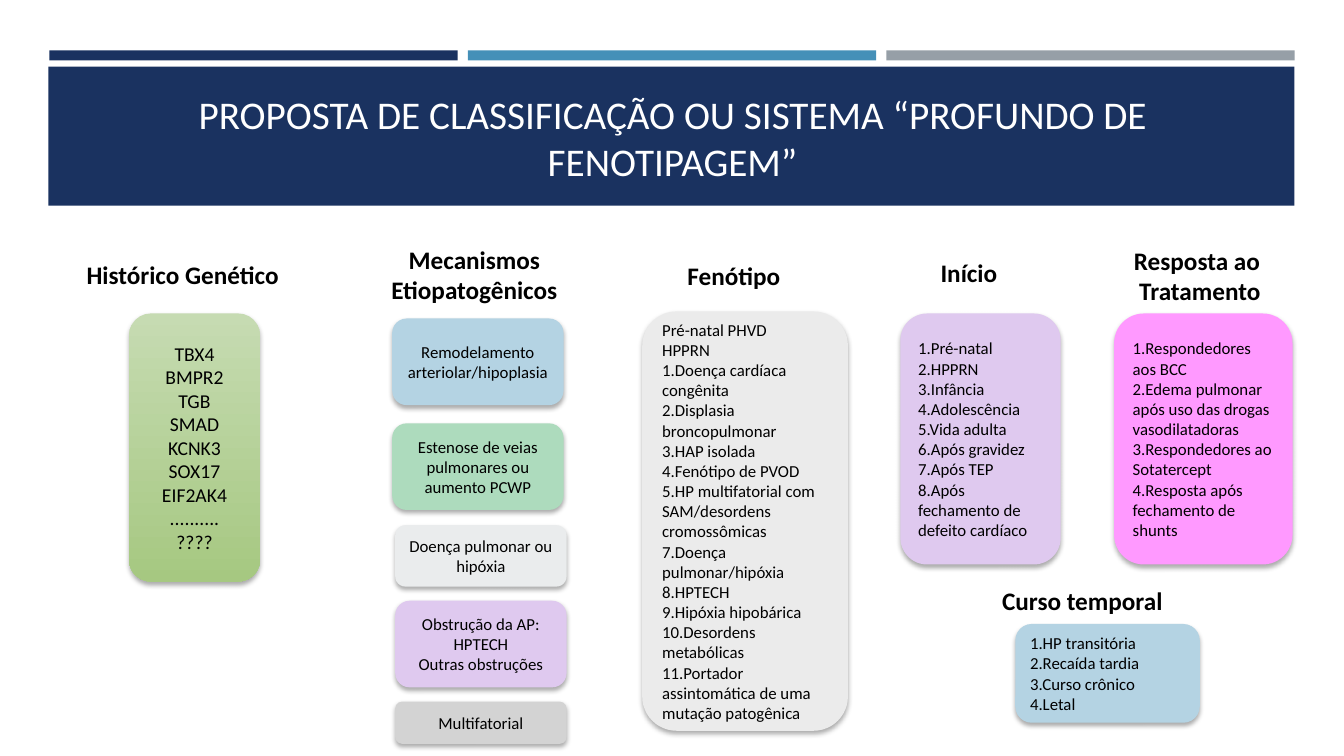
from dataclasses import dataclass

from lxml import etree
from pptx import Presentation
from pptx import util as u
from pptx.dml.color import RGBColor
from pptx.enum import shapes, text
from pptx.oxml import ns


@dataclass(frozen=True)
class Theme:
    font: str = "Calibri"
    title_size: int = 28
    heading_size: int = 18
    gene_size: int = 14
    body_size: int = 12
    ink: str = "000000"
    white: str = "FFFFFF"
    navy: str = "1A3260"
    blue: str = "4590B8"
    slate: str = "969FA7"
    sky: str = "B4D3E3"
    mint: str = "ADDBBD"
    mist: str = "EAECED"
    lilac: str = "DFC9EF"
    silver: str = "D3D3D3"
    pearl: str = "EBEBEB"
    pink: str = "FF99FF"
    leaf_top: str = "C6DBB2"
    leaf_bottom: str = "A6C881"


@dataclass(frozen=True)
class Area:
    """Place on the grid, in columns and rows."""
    col: float
    row: float
    cols: float
    rows: float


@dataclass(frozen=True)
class Heading:
    area: Area
    lines: tuple[str, ...]
    centred: bool = False


@dataclass(frozen=True)
class Card:
    area: Area
    fills: tuple[str, ...]  # two colours make a vertical gradient
    lines: tuple[str, ...]
    centred: bool = False
    size: int = 12


T = Theme()
CELL = u.Inches(0.1)  # the slide is 133.3 columns by 75 rows
SLIDE_COLS, SLIDE_ROWS = 133.3, 75
CARD_TOP = 31.1

# Top stripes: three equal columns above the title band
BAND = Area(4.8, 6.6, 123.6, 13.8)
TITLE = Area(6.4, 7.7, 120.6, 11.1)
STRIPES = [Area(4.9 + 41.5 * i, 5, 40.5, 1) for i in range(3)]

HEADINGS = [
    Heading(Area(7.6, 25.2, 25.1, 4), ("Histórico Genético",)),
    Heading(Area(34.5, 23.7, 25.1, 7.1), ("Mecanismos Etiopatogênicos",), True),
    Heading(Area(67.2, 25.3, 25.1, 4), ("Fenótipo",)),
    Heading(Area(92.3, 25, 25.1, 4), ("Início",)),
    Heading(Area(105, 23.8, 28, 7.1), ("Resposta ao ", "Tratamento"), True),
    Heading(Area(98.4, 57.6, 25.1, 4), ("Curso temporal",)),
]

# Mechanism cards: column, row, rows, fill, text
MECHANISMS = [
    (38.9, 31.6, 8.6, T.sky, "Remodelamento arteriolar/hipoplasia"),
    (38.9, 42, 8.6, T.mint, "Estenose de veias pulmonares ou aumento PCWP"),
    (39.2, 52.1, 6.1, T.mist, "Doença pulmonar ou hipóxia"),
    (39.2, 59.6, 8.6, T.lilac, "Obstrução da AP:\nHPTECH\nOutras obstruções"),
    (39.2, 69.6, 4.2, T.silver, "Multifatorial"),
]

CARDS = [
    Card(Area(12.8, CARD_TOP, 13, 26.6), (T.leaf_top, T.leaf_bottom),
         ("TBX4", "BMPR2", "TGB", "SMAD", "KCNK3", "SOX17", "EIF2AK4",
          "..........", "????"), True, T.gene_size),
    *(Card(Area(col, row, 17, rows), (fill,), (line,), True, T.body_size)
      for col, row, rows, fill, line in MECHANISMS),
    Card(Area(63.7, 30.9, 20.4, 41.6), (T.pearl,),
         ("Pré-natal PHVD\nHPPRN", "1.Doença cardíaca congênita",
          "2.Displasia broncopulmonar", "3.HAP isolada",
          "4.Fenótipo de PVOD",
          "5.HP multifatorial com SAM/desordens cromossômicas",
          "7.Doença pulmonar/hipóxia", "8.HPTECH",
          "9.Hipóxia hipobárica", "10.Desordens metabólicas",
          "11.Portador assintomática de uma mutação patogênica")),
    Card(Area(89.3, CARD_TOP, 15.9, 24.9), (T.lilac,),
         ("1.Pré-natal", "2.HPPRN", "3.Infância", "4.Adolescência",
          "5.Vida adulta", "6.Após gravidez", "7.Após TEP",
          "8.Após fechamento de defeito cardíaco")),
    Card(Area(110.5, CARD_TOP, 17.7, 24.9), (T.pink,),
         ("1.Respondedores aos BCC",
          "2.Edema pulmonar após uso das drogas vasodilatadoras",
          "3.Respondedores ao Sotatercept",
          "4.Resposta após fechamento de shunts")),
    Card(Area(100.7, 61.9, 18.3, 9.8), (T.sky,),
         ("1.HP transitória", "2.Recaída tardia", "3.Curso crônico",
          "4.Letal")),
]


def emu(area: Area) -> list[int]:
    return [round(n * CELL) for n in (area.col, area.row, area.cols, area.rows)]


def rgb(colour: str) -> RGBColor:
    return RGBColor.from_string(colour)


def write(tf, lines: tuple[str, ...], size: int, colour: str,
          centred: bool, bold: bool = False) -> None:
    """Write one paragraph per line; a newline is a break inside it."""
    tf.word_wrap = True
    for i, line in enumerate(lines):
        p = tf.paragraphs[0] if i == 0 else tf.add_paragraph()
        p.alignment = text.PP_ALIGN.CENTER if centred else text.PP_ALIGN.LEFT
        for j, part in enumerate(line.split("\n")):
            if j:
                p.add_line_break()
            r = p.add_run()
            r.text = part
            r.font.name, r.font.size = T.font, u.Pt(size)
            r.font.bold, r.font.color.rgb = bold, rgb(colour)


def add_block(s, kind: shapes.MSO_SHAPE, area: Area, fills: tuple[str, ...]):
    sp = s.shapes.add_shape(kind, *emu(area))
    sp.shadow.inherit = False
    sp.line.fill.background()
    if len(fills) == 1:
        sp.fill.solid()
        sp.fill.fore_color.rgb = rgb(fills[0])
    else:
        sp.fill.gradient()
        sp.fill.gradient_angle = 270
        for stop, colour in zip(sp.fill.gradient_stops, fills):
            stop.color.rgb = rgb(colour)
    return sp


def add_shadow(sp) -> None:
    effects = sp._element.spPr.find(ns.qn("a:effectLst"))
    shadow = etree.SubElement(effects, ns.qn("a:outerShdw"), {
        "blurRad": str(u.Pt(3.5)), "dist": str(u.Pt(2.2)),
        "dir": "5400000", "rotWithShape": "0"})
    colour = etree.SubElement(shadow, ns.qn("a:srgbClr"), val=T.ink)
    etree.SubElement(colour, ns.qn("a:alpha"), val="32000")


def add_title(s, title: str) -> None:
    sp = s.shapes.title
    sp.left, sp.top, sp.width, sp.height = emu(TITLE)
    s.shapes._spTree.append(sp._element)  # bring in front of the band
    sp.text_frame.vertical_anchor = text.MSO_ANCHOR.BOTTOM
    write(sp.text_frame, (title,), T.title_size, T.white, True)


def add_heading(s, heading: Heading) -> None:
    tf = s.shapes.add_textbox(*emu(heading.area)).text_frame
    tf.auto_size = text.MSO_AUTO_SIZE.SHAPE_TO_FIT_TEXT
    write(tf, heading.lines, T.heading_size, T.ink, heading.centred, True)


def add_card(s, card: Card) -> None:
    sp = add_block(s, shapes.MSO_SHAPE.ROUNDED_RECTANGLE, card.area, card.fills)
    add_shadow(sp)
    sp.text_frame.vertical_anchor = text.MSO_ANCHOR.MIDDLE
    write(sp.text_frame, card.lines, card.size, T.ink, card.centred)


def main() -> None:
    prs = Presentation()
    prs.slide_width = round(SLIDE_COLS * CELL)
    prs.slide_height = SLIDE_ROWS * CELL
    s = prs.slides.add_slide(prs.slide_layouts.get_by_name("Title Only"))

    # Stripes and title band
    for area, colour in zip([*STRIPES, BAND],
                            (T.navy, T.blue, T.slate, T.navy)):
        add_block(s, shapes.MSO_SHAPE.RECTANGLE, area, (colour,))
    add_title(s, "PROPOSTA DE CLASSIFICAÇÃO OU SISTEMA “PROFUNDO DE FENOTIPAGEM”")

    # Classification columns
    for heading in HEADINGS:
        add_heading(s, heading)
    for card in CARDS:
        add_card(s, card)

    prs.save("out.pptx")


if __name__ == "__main__":
    main()
